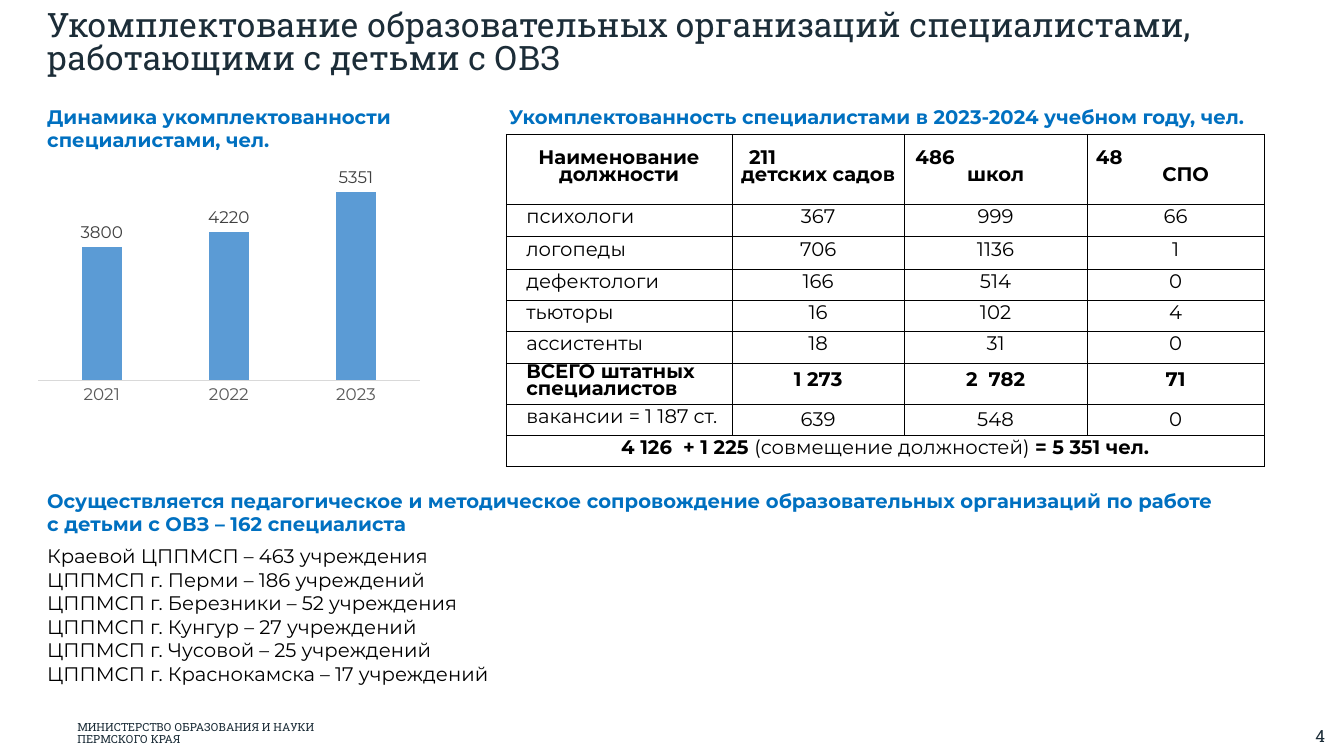
"""Build the slide on staffing of schools with specialists for children with special needs."""
from lxml import etree
from pptx import Presentation
from pptx.chart.data import CategoryChartData
from pptx.dml.color import RGBColor
from pptx.enum.chart import XL_CHART_TYPE, XL_LABEL_POSITION, XL_TICK_LABEL_POSITION, XL_TICK_MARK
from pptx.enum.text import MSO_ANCHOR, PP_ALIGN
from pptx.oxml.ns import qn
from pptx.util import Inches, Pt

LEFT, CENTER, RIGHT = PP_ALIGN.LEFT, PP_ALIGN.CENTER, PP_ALIGN.RIGHT
TOP, MIDDLE = MSO_ANCHOR.TOP, MSO_ANCHOR.MIDDLE
COLUMNS = XL_CHART_TYPE.COLUMN_CLUSTERED
OUTSIDE_END = XL_LABEL_POSITION.OUTSIDE_END
NO_TICK = XL_TICK_MARK.NONE
NO_TICK_LABELS = XL_TICK_LABEL_POSITION.NONE

BLACK = RGBColor(0x00, 0x00, 0x00)
DARK = RGBColor(0x1C, 0x2D, 0x38)
BLUE = RGBColor(0x00, 0x70, 0xC0)
BAR_BLUE = RGBColor(0x5B, 0x9B, 0xD5)
AXIS_GRAY = RGBColor(0xD9, 0xD9, 0xD9)
AXIS_TEXT = RGBColor(0x59, 0x59, 0x59)
LABEL_TEXT = RGBColor(0x40, 0x40, 0x40)
SERIF = "Roboto Slab"
SANS = "Montserrat"


def write(para, text, size=14, font=SANS, color=BLACK, bold=False,
          align=LEFT, spacing=None, before=0, indent=0):
    """Add text to a paragraph, with line breaks at newlines."""
    para.alignment = align
    para.space_before = Pt(before)
    para.line_spacing = spacing
    if indent:
        para._p.get_or_add_pPr().set("marL", str(Inches(indent)))
    for number, line in enumerate(text.split("\n")):
        if number:
            para.add_line_break()
        span = para.add_run()
        span.text = line
        span.font.size = Pt(size)
        span.font.name = font
        span.font.color.rgb = color
        span.font.bold = bold


def add_box(left, top, width, height, anchor=TOP):
    """Add a wrapping text box and return its text frame."""
    box = page.shapes.add_textbox(Inches(left), Inches(top), Inches(width), Inches(height))
    box.text_frame.word_wrap = True
    box.text_frame.vertical_anchor = anchor
    return box.text_frame


deck = Presentation()
deck.slide_width, deck.slide_height = Inches(13.33), Inches(7.5)
page = deck.slides.add_slide(deck.slide_layouts[6])

number_frame = add_box(12.65, 7.15, 0.59, 0.3)
write(number_frame.paragraphs[0], "4", size=12, font=SERIF, color=DARK, align=RIGHT)

title_frame = add_box(0.37, 0.05, 12.6, 0.78, MIDDLE)
write(title_frame.paragraphs[0],
      "Укомплектование образовательных организаций специалистами, работающими с детьми с ОВЗ",
      size=24, font=SERIF, color=DARK, spacing=0.8)

footer_frame = add_box(0.67, 7.1, 2.76, 0.37, MIDDLE)
write(footer_frame.paragraphs[0], "МИНИСТЕРСТВО ОБРАЗОВАНИЯ И НАУКИ\nПЕРМСКОГО КРАЯ",
      size=8, font=SERIF, color=DARK, spacing=0.9)

headings = [
    (0.37, 4.27, 0.57, "Динамика укомплектованности специалистами, чел."),
    (4.95, 7.95, 0.34, "Укомплектованность специалистами в 2023-2024 учебном году, чел."),
]
for left, width, height, heading in headings:
    heading_frame = add_box(left, 0.99, width, height)
    write(heading_frame.paragraphs[0], heading, color=BLUE, bold=True)

column_widths = [2.24, 1.71, 1.81, 1.76]
row_heights = [0.7, 0.31, 0.33, 0.31, 0.31, 0.31, 0.41, 0.31, 0.31]
organizations = [
    ("211", 0.11, "детских садов", 0),
    ("486", 0.05, "школ", 0),
    ("48", 0.03, "СПО", 0.2),
]
staff_rows = [
    ("психологи", "367", "999", "66"),
    ("логопеды", "706", "1136", "1"),
    ("дефектологи", "166", "514", "0"),
    ("тьюторы", "16", "102", "4"),
    ("ассистенты", "18", "31", "0"),
    ("ВСЕГО штатных специалистов", "1 273", "2  782", "71"),
    ("вакансии = 1 187 ст.", "639", "548", "0"),
]
TOTAL_ROW, VACANCY_ROW, SUM_ROW = 6, 7, 8
TIGHT = Pt(12)

table = page.shapes.add_table(len(row_heights), len(column_widths), Inches(5.02), Inches(1.33),
                              Inches(sum(column_widths)), Inches(sum(row_heights))).table
table.first_row = table.horz_banding = False
for column, width in zip(table.columns, column_widths):
    column.width = Inches(width)
for row, height in zip(table.rows, row_heights):
    row.height = Inches(height)

for cell in table.iter_cells():
    cell.vertical_anchor = MIDDLE
    cell.margin_left = cell.margin_right = Inches(0.06)
    cell.margin_top = cell.margin_bottom = 0
    properties = cell._tc.get_or_add_tcPr()
    for side in ("a:lnL", "a:lnR", "a:lnT", "a:lnB"):
        border = etree.SubElement(properties, qn(side), w=str(Pt(0.25)))
        border_fill = etree.SubElement(border, qn("a:solidFill"))
        etree.SubElement(border_fill, qn("a:srgbClr"), val=str(BLACK))
    cell.fill.background()

write(table.cell(0, 0).text_frame.paragraphs[0], "Наименование должности",
      bold=True, align=CENTER, spacing=TIGHT)
for index, (count, count_indent, kind, kind_indent) in enumerate(organizations, 1):
    header = table.cell(0, index).text_frame
    write(header.paragraphs[0], count, bold=True, spacing=TIGHT, indent=count_indent)
    write(header.add_paragraph(), kind, bold=True, align=CENTER, spacing=TIGHT, indent=kind_indent)

for row_index, values in enumerate(staff_rows, 1):
    table.cell(row_index, 0).margin_left = Inches(0.2)
    for column_index, value in enumerate(values):
        is_vacancy_count = row_index == VACANCY_ROW and column_index > 0
        write(table.cell(row_index, column_index).text_frame.paragraphs[0], value,
              bold=row_index == TOTAL_ROW, align=CENTER if column_index else LEFT,
              spacing=None if is_vacancy_count else TIGHT)

sum_cell = table.cell(SUM_ROW, 0)
sum_cell.merge(table.cell(SUM_ROW, len(column_widths) - 1))
for text, bold in [("4 126  + 1 225 ", True), ("(совмещение должностей) ", False),
                   ("= 5 351 чел.", True)]:
    write(sum_cell.text_frame.paragraphs[0], text, bold=bold, align=CENTER, spacing=TIGHT)

staff_data = CategoryChartData()
staff_data.categories = ["2021", "2022", "2023"]
staff_data.add_series("Специалисты", [3800, 4220, 5351])
chart = page.shapes.add_chart(COLUMNS, Inches(0.3), Inches(1.63), Inches(3.94), Inches(2.43),
                              staff_data).chart
chart.has_legend = chart.has_title = False
chart.font.name = SANS
chart.font.size = Pt(12)
chart.font.color.rgb = AXIS_TEXT
year_axis = chart.category_axis
year_axis.major_tick_mark = NO_TICK
year_axis.format.line.color.rgb = AXIS_GRAY
year_axis.format.line.width = Pt(0.75)
value_axis = chart.value_axis
value_axis.visible = value_axis.has_major_gridlines = False
value_axis.tick_label_position = NO_TICK_LABELS
value_axis.minimum_scale, value_axis.maximum_scale = 0, 6000

plot = chart.plots[0]
plot.gap_width, plot.overlap = 219, -27
plot.vary_by_categories = False
bars = plot.series[0]
bars.format.fill.solid()
bars.format.fill.fore_color.rgb = BAR_BLUE
labels = bars.data_labels
labels.show_value = True
labels.position = OUTSIDE_END
labels.font.name = SANS
labels.font.size = Pt(12)
labels.font.color.rgb = LABEL_TEXT

centers = [
    "Краевой ЦППМСП – 463 учреждения",
    "ЦППМСП г. Перми – 186 учреждений",
    "ЦППМСП г. Березники – 52 учреждения",
    "ЦППМСП г. Кунгур – 27 учреждений",
    "ЦППМСП г. Чусовой – 25 учреждений",
    "ЦППМСП г. Краснокамска – 17 учреждений",
]
support_frame = add_box(0.37, 4.8, 11.93, 2.07)
write(support_frame.paragraphs[0],
      "Осуществляется педагогическое и методическое сопровождение образовательных организаций "
      "по работе с детьми с ОВЗ – 162 специалиста", color=BLUE, bold=True)
for index, center in enumerate(centers):
    write(support_frame.add_paragraph(), center, before=0 if index else 6)

deck.save("out.pptx")
